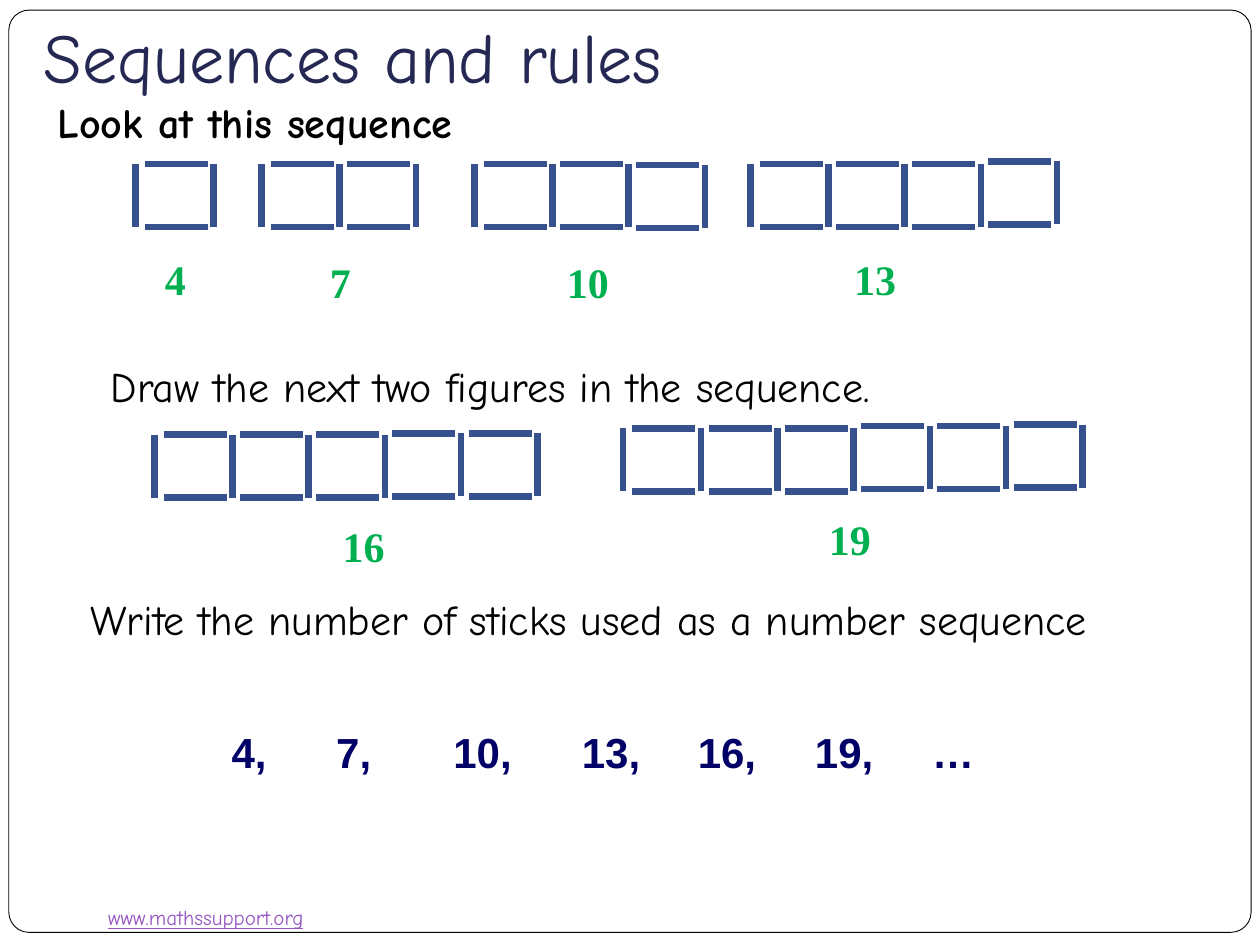
import pptx
import pptx.util
import pptx.dml.color
import pptx.enum.shapes
import pptx.enum.text
import pptx.oxml.ns
from lxml import etree

RGBColor = pptx.dml.color.RGBColor
WHITE = RGBColor(0xFF, 0xFF, 0xFF)
BLACK = RGBColor(0x00, 0x00, 0x00)
NAVY = RGBColor(0x24, 0x28, 0x52)
STICK = RGBColor(0x37, 0x50, 0x8E)
GREEN = RGBColor(0x00, 0xB0, 0x50)
DEEP = RGBColor(0x00, 0x00, 0x66)
LINK = RGBColor(0x94, 0x54, 0xC3)

COLS, ROWS = 100, 75
WIDE = pptx.util.Inches(10)
HIGH = pptx.util.Inches(7.5)
SIDE, PITCH = 5, 6.05
LEFT_GAP, RIGHT_GAP = 0.75, 0.45


def col(num):
    """Turn grid columns into a length."""
    return round(WIDE * num / COLS)


def row(num):
    """Turn grid rows into a length."""
    return round(HIGH * num / ROWS)


def place(box):
    """Turn a grid box into left, top, width and height."""
    return col(box[0]), row(box[1]), col(box[2]), row(box[3])


def write(slide, box, text, size=24, font="Comic Neue", color=BLACK,
          bold=False, under=False, wrap=True, stops=(), fit=True):
    """Add a text box with one formatted paragraph."""
    frame = slide.shapes.add_textbox(*place(box)).text_frame
    frame.word_wrap = wrap
    if fit:
        frame.auto_size = pptx.enum.text.MSO_AUTO_SIZE.SHAPE_TO_FIT_TEXT
    else:
        frame.vertical_anchor = pptx.enum.text.MSO_ANCHOR.MIDDLE
    para = frame.paragraphs[0]
    if stops:
        qn = pptx.oxml.ns.qn
        tabs = etree.SubElement(para._p.get_or_add_pPr(), qn("a:tabLst"))
        for stop in stops:
            etree.SubElement(tabs, qn("a:tab"), pos=str(col(stop)), algn="l")
    run = para.add_run()
    run.text = text
    run.font.size = pptx.util.Pt(size)
    run.font.name = font
    run.font.bold = bold
    run.font.underline = under
    run.font.color.rgb = color


def stick(slide, x, y, dx, dy):
    """Draw one stick from a grid point."""
    line = slide.shapes.add_connector(
        pptx.enum.shapes.MSO_CONNECTOR.STRAIGHT,
        col(x), row(y), col(x + dx), row(y + dy))
    line.line.color.rgb = STICK
    line.line.width = pptx.util.Pt(3.75)
    etree.SubElement(line._element.spPr, pptx.oxml.ns.qn("a:effectLst"))


def squares(slide, x, y, drops):
    """Draw a chain of stick squares, each moved down by its drop."""
    stick(slide, x - LEFT_GAP, y + drops[0], 0, SIDE)
    for num, drop in enumerate(drops):
        left, top = x + num * PITCH, y + drop
        stick(slide, left, top, SIDE, 0)
        stick(slide, left, top + SIDE, SIDE, 0)
        stick(slide, left + SIDE + RIGHT_GAP, top, 0, SIDE)


def figures(slide, box, chains):
    """Draw a band of stick figures with their counts."""
    left, top = box[:2]
    for x, y, drops, tag_x, tag_y in chains:
        squares(slide, left + x, top + y, drops)
        count = str(3 * len(drops) + 1)
        write(slide, (left + tag_x, top + tag_y, 8.1, 5), count,
              font="Times New Roman", color=GREEN, bold=True)


def frame(slide, box):
    """Draw the rounded border and the site address."""
    left, top, wide, high = box
    edge = slide.shapes.add_shape(
        pptx.enum.shapes.MSO_SHAPE.ROUNDED_RECTANGLE, *place(box))
    edge.adjustments[0] = 0.022
    edge.shadow.inherit = False
    edge.fill.solid()
    edge.fill.fore_color.rgb = WHITE
    edge.line.color.rgb = BLACK
    edge.line.width = pptx.util.Pt(0.5)
    write(slide, (left + 6.9, top + high - 2.7, 19.6, 3),
          "www.mathssupport.org", size=12, color=LINK, under=True, wrap=False)


def head(slide, box):
    """Write the title and the first prompt."""
    left, top, wide, high = box
    write(slide, (left, top, 85, 7.2), "Sequences and rules",
          size=40, color=NAVY, fit=False)
    write(slide, (left + 1.1, top + 6.4, wide - 1.1, 5),
          "Look at this sequence", bold=True)


def answer(slide, box):
    """Write the last prompt and the number sequence."""
    left, top, wide, high = box
    write(slide, (left, top, wide, 5),
          "Write the number of sticks used as a number sequence")
    terms = [f"{num}," for num in range(4, 20, 3)] + ["…"]
    write(slide, (left + 11.2, top + 10.6, 64.3, 5), "\t".join(terms),
          font="Arial", color=DEEP, bold=True,
          stops=(8.3, 17.6, 27.8, 37, 46.3, 55.6))


def main():
    """Build the slide and save it."""
    deck = pptx.Presentation()
    deck.slide_width, deck.slide_height = WIDE, HIGH
    slide = deck.slides.add_slide(deck.slide_layouts[6])
    frame(slide, (0.7, 0.8, 98.6, 73.2))
    head(slide, (2.5, 0.8, 92.7, 11.4))
    figures(slide, (10, 13, 75, 12), (
        (1.5, 0, (0,), 2.1, 6.6),
        (11.5, 0, (0, 0), 15.2, 6.9),
        (28.4, 0, (0, 0, 0.1), 34, 6.9),
        (50.3, 0, (0, 0, 0, -0.2), 56.8, 6.6)))
    write(slide, (7.8, 28.1, 81.3, 5),
          "Draw the next two figures in the sequence.")
    figures(slide, (12, 34, 75, 12), (
        (1, 0.5, (0, 0, 0, -0.1, -0.1), 14.2, 6.8),
        (38.2, 0, (0, 0, 0, -0.2, -0.2, -0.3), 52.8, 6.3)))
    answer(slide, (6.2, 46.6, 90.4, 16))
    deck.save("out.pptx")


if __name__ == "__main__":
    main()
